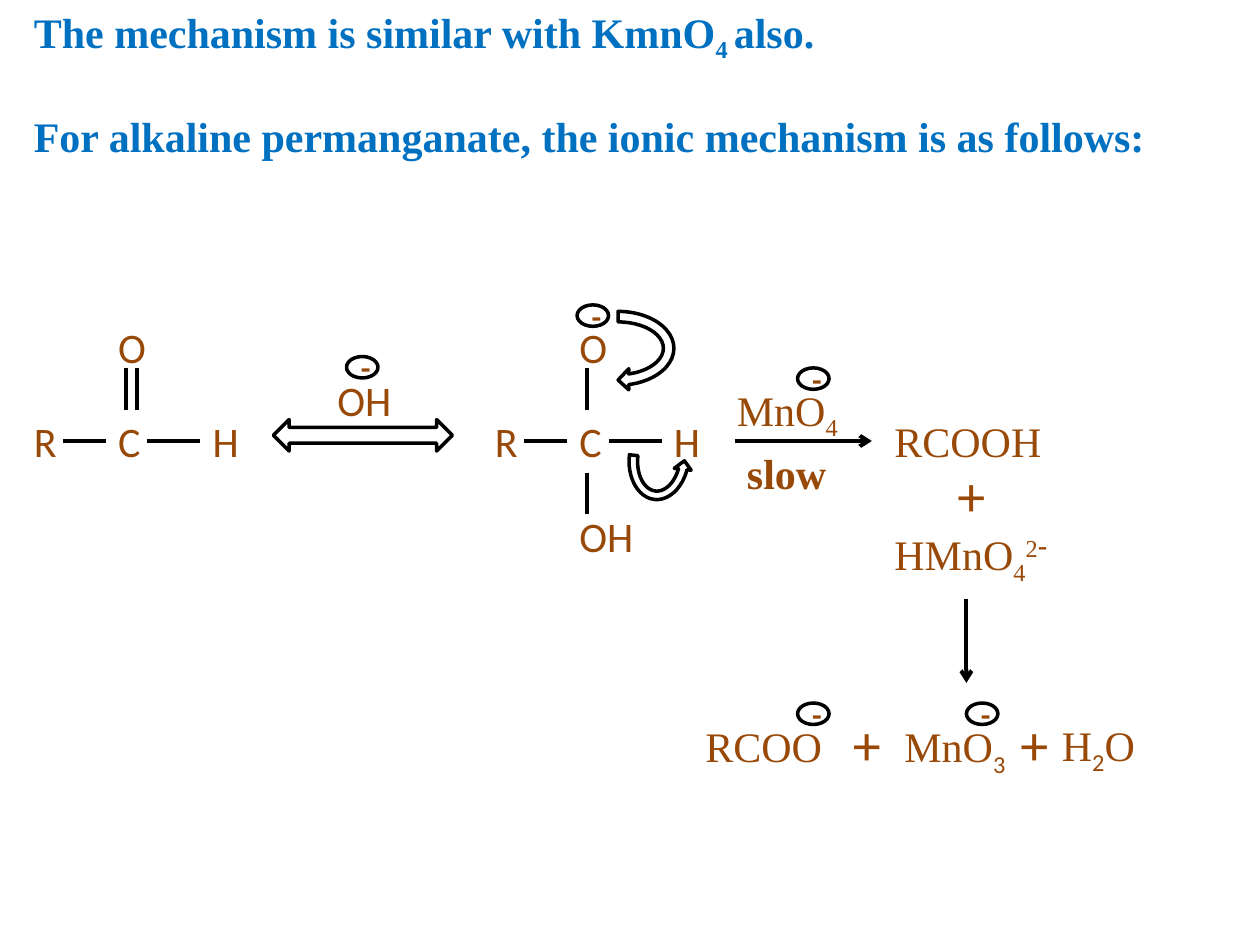
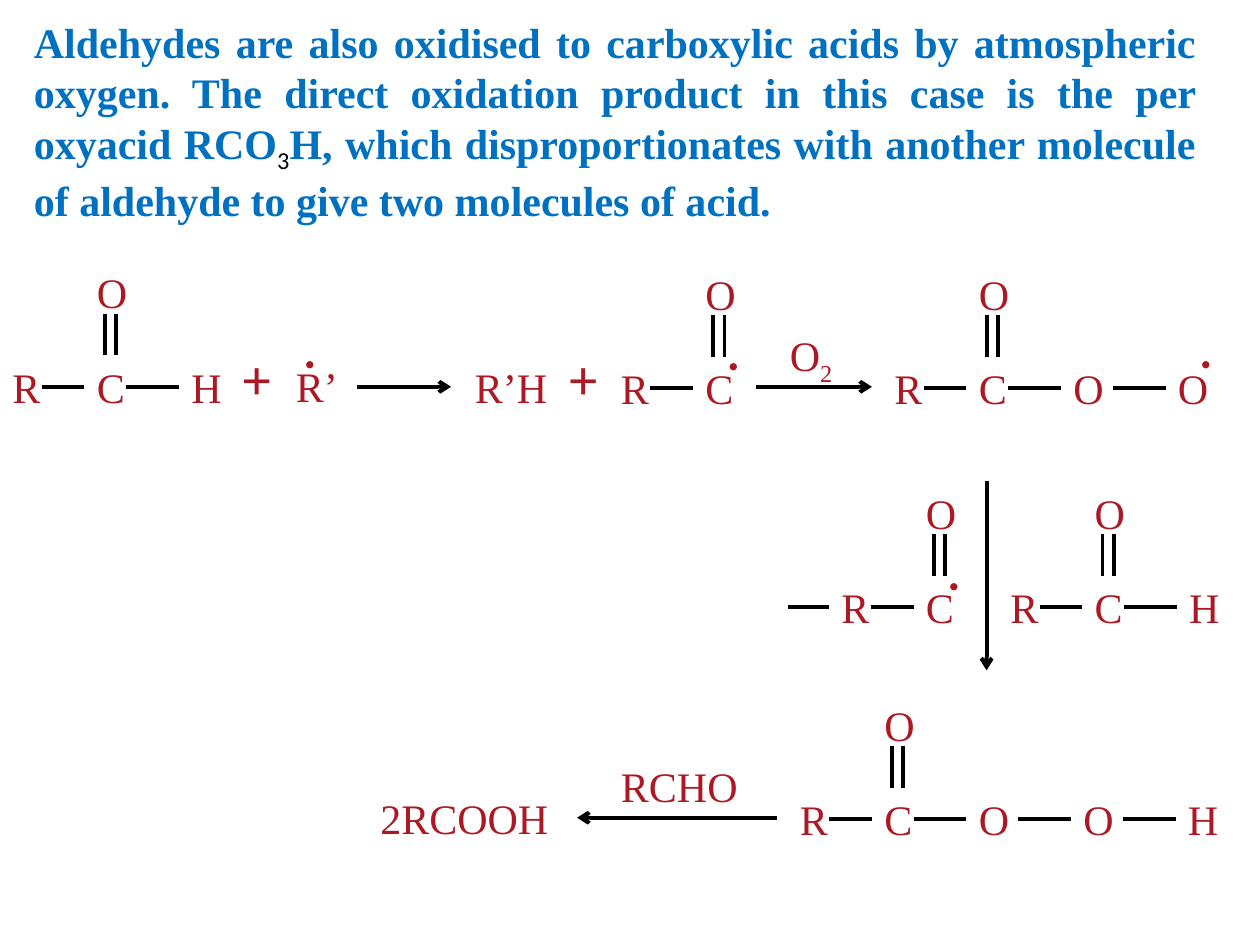
"""Build two slides on how aldehydes are oxidised."""
from dataclasses import dataclass
from typing import Any, NamedTuple, Optional

import pptx
import pptx.dml.color
import pptx.enum.shapes
import pptx.enum.text
import pptx.oxml.ns
import pptx.util
from lxml import etree

EMU_PER_PX = 9144
SERIF, SANS = "Times New Roman", "Calibri"
BLUE, BROWN, RED, BLACK, WHITE = "0070C0", "984807", "AC1823", "000000", "FFFFFF"
SUB, SUPER = -25000, 30000
TOP, LEFT = 0, 1
SHAPES = pptx.enum.shapes.MSO_SHAPE
ALIGN = pptx.enum.text.PP_ALIGN


class Span(NamedTuple):
    text: str
    baseline: int = 0
    font: dict[str, Any] = {}
    colour: Optional[str] = None


class Ink(NamedTuple):
    colour: str
    font: dict[str, Any]


@dataclass
class Label:
    left: int
    top: int
    width: int
    spans: list[Span]
    ink: Ink
    height: int = 50
    align: Any = ALIGN.LEFT


@dataclass
class Molecule:
    left: int
    top: int
    tail: str = ""
    hydroxy: bool = False


class Arrow(NamedTuple):
    x1: int
    y1: int
    x2: int
    y2: int


class Outline(NamedTuple):
    preset: Any
    left: int
    top: int
    width: int
    height: int
    rotation: float = 0
    flipped: bool = False


def px(length: int) -> int:
    return pptx.util.Emu(length * EMU_PER_PX)


def rgb(value: str) -> pptx.dml.color.RGBColor:
    return pptx.dml.color.RGBColor.from_string(value)


def set_all(target: Any, values: dict[str, Any]) -> None:
    for name, value in values.items():
        setattr(target, name, value)


def make_ink(colour: str, name: str, size: int = 24, bold: bool = False) -> Ink:
    return Ink(colour, {"name": name, "size": pptx.util.Pt(size), "bold": bold})


def write(para: Any, spans: list[Span], ink: Ink) -> None:
    for item in spans:
        span = para.add_run()
        span.text = item.text
        set_all(span.font, ink.font | item.font)
        span.font.color.rgb = rgb(item.colour or ink.colour)
        if item.baseline:
            span._r.get_or_add_rPr().set("baseline", str(item.baseline))


def draw_label(page: Any, label: Label) -> Any:
    box = page.shapes.add_textbox(px(label.left), px(label.top), px(label.width), px(label.height))
    set_all(box.text_frame, {"word_wrap": True,
                             "auto_size": pptx.enum.text.MSO_AUTO_SIZE.SHAPE_TO_FIT_TEXT})
    para = box.text_frame.paragraphs[0]
    para.alignment = label.align
    write(para, label.spans, label.ink)
    return box


def draw_text(page: Any, left: int, top: int, width: int, text: str, ink: Ink) -> Any:
    return draw_label(page, Label(left, top, width, [Span(text)], ink))


def draw_line(page: Any, x1: int, y1: int, x2: int, y2: int, target: Any = None,
              side: int = LEFT, arrow: bool = False) -> None:
    line = page.shapes.add_connector(pptx.enum.shapes.MSO_CONNECTOR.STRAIGHT,
                                     px(x1), px(y1), px(x2), px(y2))
    line.line.color.rgb = rgb(BLACK)
    line.line.width = pptx.util.Pt(2.25)
    if target is not None:
        line.end_connect(target, side)
    if arrow:
        etree.SubElement(line.line._get_or_add_ln(), pptx.oxml.ns.qn("a:tailEnd"), type="arrow")
    etree.SubElement(line._element.spPr, pptx.oxml.ns.qn("a:effectLst"))


def draw_outline(page: Any, item: Outline) -> Any:
    shape = page.shapes.add_shape(item.preset, px(item.left), px(item.top),
                                  px(item.width), px(item.height))
    shape.shadow.inherit = False
    shape.fill.solid()
    shape.fill.fore_color.rgb = rgb(WHITE)
    shape.line.color.rgb = rgb(BLACK)
    shape.line.width = pptx.util.Pt(2)
    shape.rotation = item.rotation
    if item.flipped:
        shape._element.spPr.xfrm.set("flipH", "1")
    return shape


def draw_charge(page: Any, left: int, top: int) -> None:
    shape = draw_outline(page, Outline(SHAPES.FLOWCHART_CONNECTOR, left, top, 25, 17))
    shape.text_frame.vertical_anchor = pptx.enum.text.MSO_ANCHOR.MIDDLE
    para = shape.text_frame.paragraphs[0]
    para.alignment = ALIGN.CENTER
    write(para, [Span("-")], make_ink(BROWN, SANS, 18, True))


def draw_plus(page: Any, left: int, top: int, colour: str) -> None:
    draw_label(page, Label(left, top, 42, [Span("+")], make_ink(colour, SANS, 32), 64))


def draw_molecule(page: Any, molecule: Molecule, ink: Ink) -> None:
    left, top = molecule.left, molecule.top
    middle, carbon_left = top + 25, left + 67
    draw_text(page, left, top, 58, "R", ink)
    carbon = draw_text(page, carbon_left, top, 50, "C", ink)
    draw_text(page, carbon_left, top - 75, 33, "O", ink)
    draw_line(page, left + 33, middle, carbon_left, middle, carbon)
    draw_line(page, left + 83, top - 33, left + 83, top)
    if molecule.hydroxy:
        draw_line(page, left + 83, top + 50, left + 83, top + 83)
        draw_text(page, carbon_left, top + 75, 67, "OH", ink)
    else:
        draw_line(page, left + 92, top - 33, left + 92, top, carbon, TOP)
    for index, symbol in enumerate(molecule.tail):
        atom_left = left + 142 + 83 * index
        atom = draw_text(page, atom_left, top, 33, symbol, ink)
        draw_line(page, atom_left - 42, middle, atom_left, middle, atom)


def draw_arrows(page: Any, arrows: list[Arrow]) -> None:
    for arrow in arrows:
        draw_line(page, *arrow, arrow=True)


def build_permanganate(page: Any, heading: Ink) -> None:
    atoms, formula = make_ink(BROWN, SANS), make_ink(BROWN, SERIF)
    for left, top in [(275, 283), (458, 242), (633, 292), (633, 558), (767, 558)]:
        draw_charge(page, left, top)
    for item in [Outline(SHAPES.LEFT_RIGHT_ARROW, 217, 333, 142, 25),
                 Outline(SHAPES.CIRCULAR_ARROW, 496, 327, 54, 73, 186.3, True),
                 Outline(SHAPES.CIRCULAR_ARROW, 457, 228, 67, 97, 90)]:
        draw_outline(page, item)
    for molecule in [Molecule(17, 325, "H"), Molecule(383, 325, "H", hydroxy=True)]:
        draw_molecule(page, molecule, atoms)
    draw_text(page, 258, 292, 67, "OH", atoms)
    draw_arrows(page, [Arrow(583, 350, 692, 350), Arrow(767, 475, 767, 542)])
    for left, top in [(750, 361), (667, 558), (800, 558)]:
        draw_plus(page, left, top, BROWN)
    sans = {"name": SANS}
    charge_font = {"size": pptx.util.Pt(28), "bold": True}
    for label in [
        Label(575, 300, 183, [Span("MnO"), Span("4", SUB)], formula),
        Label(583, 350, 183, [Span("slow")], make_ink(BROWN, SERIF, bold=True)),
        Label(700, 325, 242, [Span("RCOOH")], formula),
        Label(700, 409, 175, [Span("HMnO"), Span("4", SUB), Span("2", SUPER),
                              Span("-", SUPER, charge_font)], formula, 57),
        Label(550, 567, 192, [Span("RCOO")], formula),
        Label(708, 567, 200, [Span("MnO"), Span("3", SUB, sans)], formula),
        Label(833, 566, 167, [Span("H"), Span("2", SUB, sans), Span("O")], formula),
        Label(17, 83, 908, [Span("For alkaline permanganate, the ionic mechanism "
                                 "is as follows:")], heading),
        Label(17, 0, 792, [Span("The mechanism is similar with KmnO"), Span("4 ", SUB),
                           Span("also.")], heading),
    ]:
        draw_label(page, label)


def build_air_oxidation(page: Any, heading: Ink) -> None:
    ink, dot = make_ink(RED, SERIF), make_ink(RED, SANS, 28, True)
    for molecule in [Molecule(0, 282, "H"), Molecule(483, 283), Molecule(700, 283, "OO"),
                     Molecule(792, 457, "H"), Molecule(625, 625, "OOH")]:
        draw_molecule(page, molecule, ink)
    radical_left, radical_top = 658, 457
    draw_molecule(page, Molecule(radical_left, radical_top), ink)
    draw_line(page, radical_left - 33, radical_top + 25, radical_left, radical_top + 25,)
    for left in (183, 442):
        draw_plus(page, left, 268, RED)
    for left, top in [(231, 249), (567, 250), (942, 249), (742, 425)]:
        draw_label(page, Label(left, top, 50, [Span(".")], dot, 57))
    draw_arrows(page, [Arrow(283, 307, 358, 307), Arrow(600, 307, 692, 307),
                       Arrow(783, 382, 783, 532), Arrow(617, 649, 458, 649)])
    for label in [
        Label(225, 281, 65, [Span("R’")], ink),
        Label(367, 282, 100, [Span("R’H")], ink),
        Label(617, 257, 58, [Span("O"), Span("2", SUB)], ink),
        Label(483, 599, 192, [Span("RCHO")], ink),
        Label(292, 624, 192, [Span("2RCOOH")], ink),
        Label(17, 8, 942, [
            Span("Aldehydes are also oxidised to carboxylic acids by atmospheric oxygen. "
                 "The direct oxidation product in this case is the per oxyacid RCO"),
            Span("3", SUB, {"name": SANS, "bold": False}, BLACK),
            Span("H, which disproportionates with another molecule of aldehyde "
                 "to give two molecules of acid."),
        ], heading, 172, ALIGN.JUSTIFY),
    ]:
        draw_label(page, label)


def main() -> None:
    deck = pptx.Presentation()
    set_all(deck, {"slide_width": px(1000), "slide_height": px(750)})
    heading = make_ink(BLUE, SERIF, bold=True)
    for build in (build_permanganate, build_air_oxidation):
        build(deck.slides.add_slide(deck.slide_layouts[6]), heading)
    deck.save("out.pptx")


if __name__ == "__main__":
    main()
